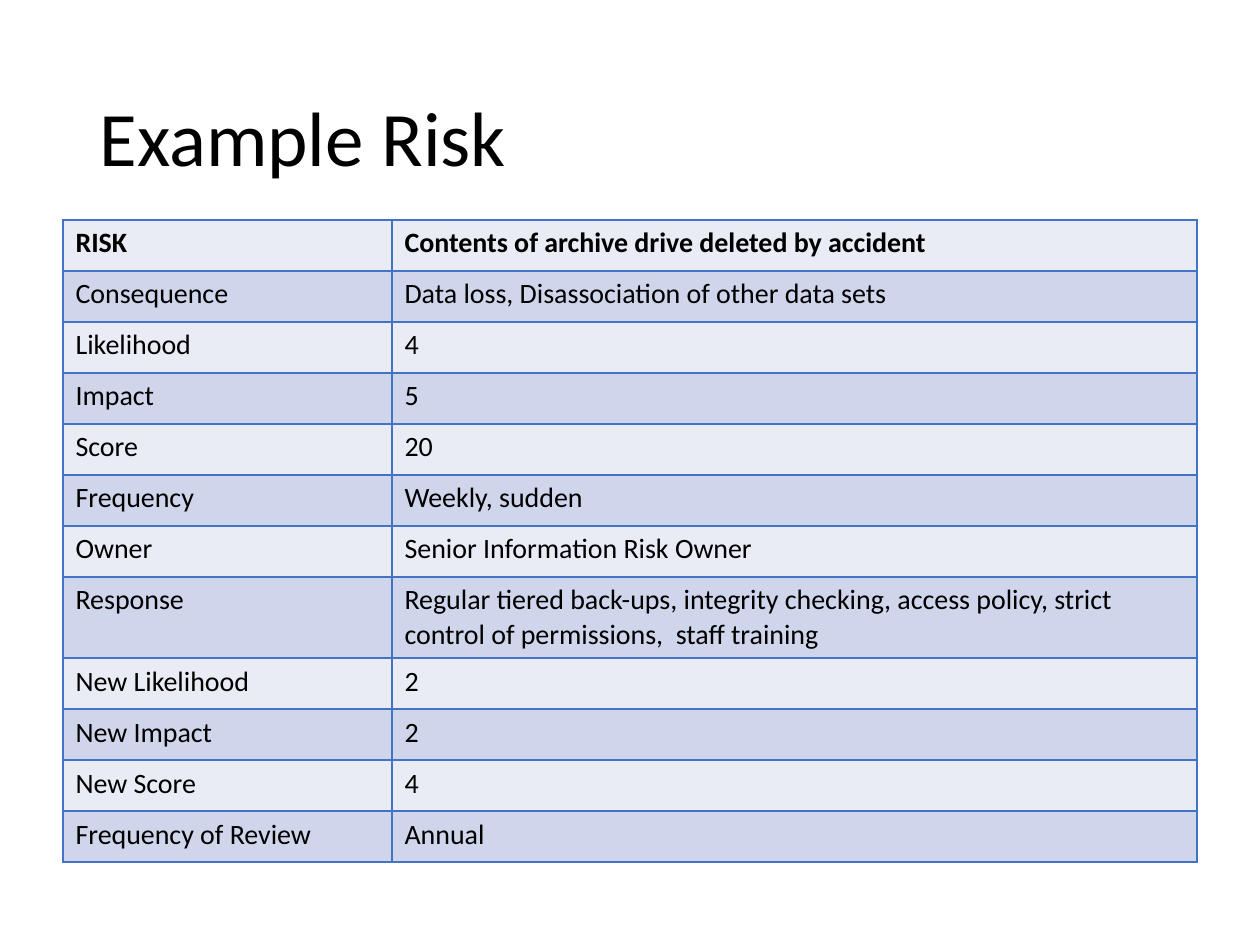
"""Build the slide with the table of an example risk."""
from lxml import etree
from pptx import Presentation
from pptx.dml.color import RGBColor
from pptx.enum.text import MSO_ANCHOR, PP_ALIGN
from pptx.oxml.ns import qn
from pptx.util import Pt

MIDDLE = MSO_ANCHOR.MIDDLE
LEFT = PP_ALIGN.LEFT
SCALE = 914400 / 126
FACE = "Calibri"
BLACK = RGBColor(0x00, 0x00, 0x00)
BLUE = RGBColor(0x44, 0x72, 0xC4)
BANDS = (RGBColor(0xE9, 0xEB, 0xF5), RGBColor(0xCF, 0xD5, 0xEA))

TITLE = "Example Risk"
ROWS = [
    ("RISK", "Contents of archive drive deleted by accident"),
    ("Consequence", "Data loss, Disassociation of other data sets"),
    ("Likelihood", "4"),
    ("Impact", "5"),
    ("Score", "20"),
    ("Frequency", "Weekly, sudden"),
    ("Owner", "Senior Information Risk Owner"),
    ("Response", "Regular tiered back-ups, integrity checking, access policy, "
                 "strict control of permissions,  staff training"),
    ("New Likelihood", "2"),
    ("New Impact", "2"),
    ("New Score", "4"),
    ("Frequency of Review", "Annual"),
]
WIDTHS = (329, 805)
LOW, TALL = 51, 81
HEIGHTS = [TALL if label == "Response" else LOW for label, _ in ROWS]


def px(count):
    return round(count * SCALE)


def style(para, size, bold=False):
    font = para.font
    font.name, font.size, font.bold = FACE, Pt(size), bold
    font.color.rgb = BLACK


def border(cell):
    props = cell._tc.get_or_add_tcPr()
    for side in ("lnL", "lnR", "lnT", "lnB"):
        line = etree.SubElement(props, qn(f"a:{side}"), w=str(Pt(1)))
        fill = etree.SubElement(line, qn("a:solidFill"))
        etree.SubElement(fill, qn("a:srgbClr"), val=str(BLUE))


def add_title(slide):
    title = slide.shapes.title
    title.left, title.top = px(87), px(50)
    title.width, title.height = px(1086), px(183)
    frame = title.text_frame
    frame.text = TITLE
    frame.vertical_anchor = MIDDLE
    para = frame.paragraphs[0]
    para.alignment = LEFT
    para.line_spacing = 0.9
    style(para, 44)


def add_risks(slide):
    table = slide.shapes.add_table(
        len(ROWS), len(WIDTHS), px(63), px(220),
        px(sum(WIDTHS)), px(sum(HEIGHTS))).table
    for col, width in zip(table.columns, WIDTHS):
        col.width = px(width)
    for i, texts in enumerate(ROWS):
        table.rows[i].height = px(HEIGHTS[i])
        for j, text in enumerate(texts):
            cell = table.cell(i, j)
            cell.text = text
            style(cell.text_frame.paragraphs[0], 16, bold=i == 0)
            border(cell)
            cell.fill.solid()
            cell.fill.fore_color.rgb = BANDS[i % 2]


def main():
    deck = Presentation()
    deck.slide_width, deck.slide_height = px(1260), px(945)
    slide = deck.slides.add_slide(deck.slide_layouts[5])
    add_title(slide)
    add_risks(slide)
    deck.save("out.pptx")


if __name__ == "__main__":
    main()
